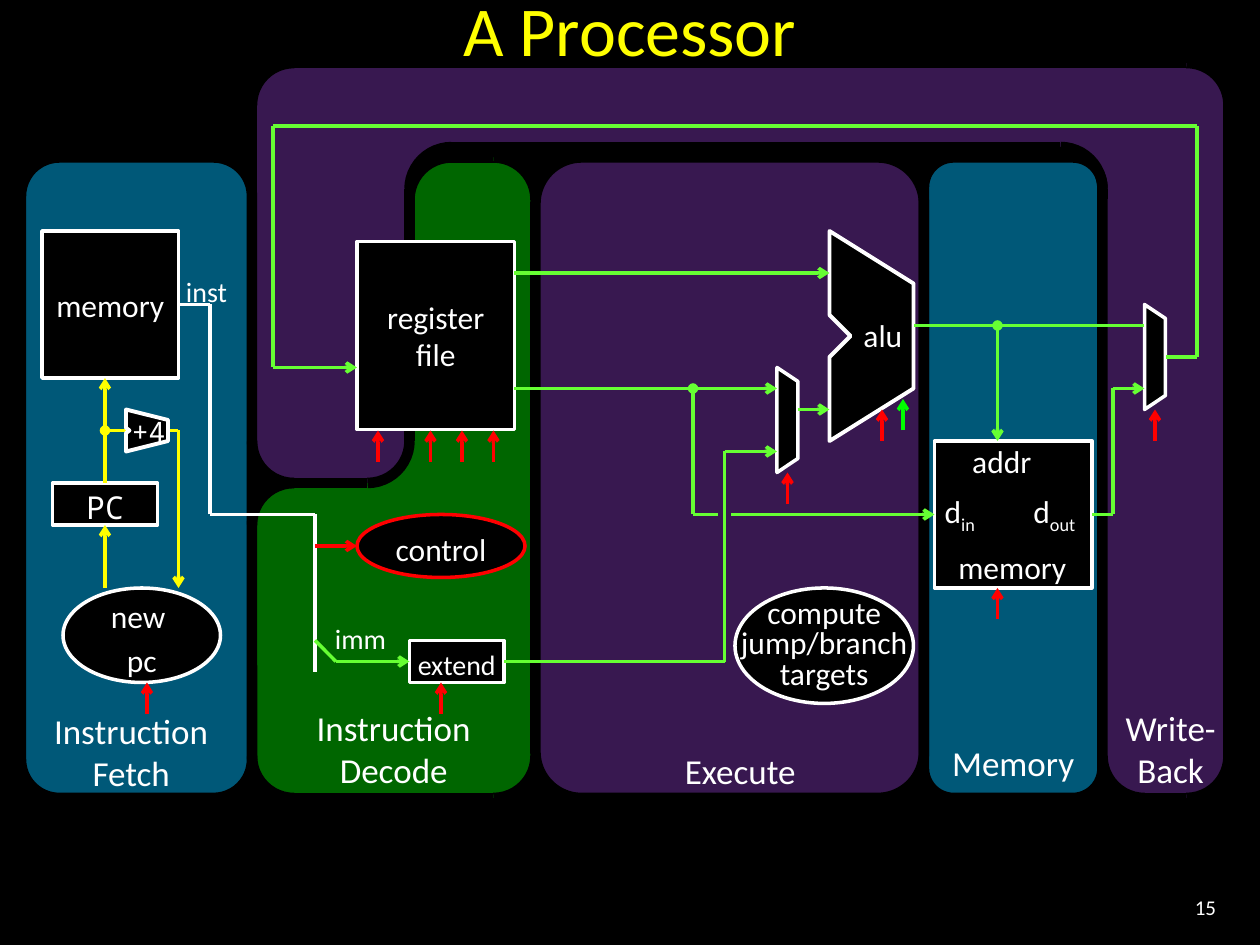
from lxml import etree
from pptx import Presentation
from pptx.dml.color import RGBColor
from pptx.enum.shapes import MSO_CONNECTOR, MSO_SHAPE
from pptx.enum.text import MSO_ANCHOR, PP_ALIGN
from pptx.oxml.ns import qn
from pptx.util import Pt

RECT, ROUND = MSO_SHAPE.RECTANGLE, MSO_SHAPE.ROUNDED_RECTANGLE
OVAL, ARC, TRIANGLE = MSO_SHAPE.OVAL, MSO_SHAPE.ARC, MSO_SHAPE.RIGHT_TRIANGLE
STRAIGHT = MSO_CONNECTOR.STRAIGHT
MIDDLE, TOP_ANCHOR = MSO_ANCHOR.MIDDLE, MSO_ANCHOR.TOP
CENTER, RIGHT_ALIGN = PP_ALIGN.CENTER, PP_ALIGN.RIGHT
TOP, LEFT, BOTTOM, RIGHT = range(4)  # connection sites of a rectangle
MONO = "Noto Sans Mono"
COLORS = {
    "black": "000000", "white": "FFFFFF", "yellow": "FFFF00", "red": "FF0000",
    "lime": "66FF33", "green": "00FF00", "forest": "006600",
    "purple": "381850", "teal": "005878",
}
CORNER = {"tr": 0, "br": 90, "bl": 180, "tl": 270}  # arc rotation


def rgb(name):
    return RGBColor.from_string(COLORS[name])


def put_text(sp, text, size=18, color="white", font="Calibri", align=CENTER,
             anchor=MIDDLE, wrap=True, spacing=None, inset=(7.2, 3.6), sub=None):
    tf = sp.text_frame
    tf.word_wrap, tf.vertical_anchor = wrap, anchor
    tf.margin_left = tf.margin_right = Pt(inset[0])
    tf.margin_top = tf.margin_bottom = Pt(inset[1])
    p = tf.paragraphs[0]
    p.alignment = align
    if spacing:
        p.line_spacing = spacing
    for i, line in enumerate(text.split("\n")):
        if i:
            p.add_line_break()
        p.add_run().text = line
    if sub:
        r = p.add_run()
        r.text = sub
        r.font._element.set("baseline", "-25000")
    for r in p.runs:
        r.font.size, r.font.name = Pt(size), font
        r.font.color.rgb = rgb(color)


class Diagram:
    def __init__(self, slide):
        self.shapes = slide.shapes

    def paint(self, sp, fill, line, width):
        sp.shadow.inherit = False
        if fill:
            sp.fill.solid()
            sp.fill.fore_color.rgb = rgb(fill)
        else:
            sp.fill.background()
        if line:
            sp.line.color.rgb = rgb(line)
            sp.line.width = Pt(width)
        else:
            sp.line.fill.background()
        return sp

    def shape(self, kind, box, fill=None, line=None, width=2, adj=None, rot=0):
        sp = self.shapes.add_shape(kind, *map(Pt, box))
        if adj:
            sp.adjustments[0] = adj
        sp.rotation = rot
        return self.paint(sp, fill, line, width)

    def block(self, kind, box, text=None, line="white", **fmt):
        sp = self.shape(kind, box, "black", line)
        if text:
            put_text(sp, text, **fmt)
        return sp

    def polygon(self, points, width=2):
        pts = [(Pt(x), Pt(y)) for x, y in points]
        fb = self.shapes.build_freeform(*pts[0], scale=1.0)
        fb.add_line_segments(pts[1:], close=True)
        return self.paint(fb.convert_to_shape(), "black", "white", width)

    def label(self, box, text, **fmt):
        put_text(self.shapes.add_textbox(*map(Pt, box)), text, **fmt)

    def wire(self, color, x1, y1, x2, y2, head=None, tail=None, width=2,
             begin=None, end=None):
        c = self.shapes.add_connector(STRAIGHT, Pt(x1), Pt(y1), Pt(x2), Pt(y2))
        c.line.color.rgb = rgb(color)
        c.line.width = Pt(width)
        ln = c.line._get_or_add_ln()
        for tag, kind in (("a:headEnd", head), ("a:tailEnd", tail)):
            if kind:
                etree.SubElement(ln, qn(tag)).set("type", kind)
        etree.SubElement(c._element.spPr, qn("a:effectLst"))
        if begin:
            c.begin_connect(*begin)
        if end:
            c.end_connect(*end)


prs = Presentation()
prs.slide_width, prs.slide_height = Pt(720), Pt(540)
s = prs.slides.add_slide(prs.slide_layouts[6])
s.background.fill.solid()
s.background.fill.fore_color.rgb = rgb("black")
d = Diagram(s)

# Stage regions
FETCH, EXECUTE, MEMORY = (12, 90, 132, 366), (306, 90, 222, 366), (528, 90, 102, 366)
d.shape(TRIANGLE, (606, 72, 48, 54), "purple", rot=180)
for box in ((630, 36, 72, 420), (144, 36, 90, 240), (162, 36, 504, 48)):
    d.shape(ROUND, box, "purple", adj=0.304)
d.shape(TRIANGLE, (213, 69, 48, 54), "purple", rot=90)
d.shape(ROUND, MEMORY, "teal", adj=0.14)
d.shape(ROUND, FETCH, "teal")
d.shape(ROUND, EXECUTE, "purple", adj=0.119)
d.shape(ROUND, (234, 90, 72, 366), "forest", adj=0.31)
d.shape(ROUND, (144, 276, 162, 180), "forest", adj=0.159)
d.shape(TRIANGLE, (203, 247, 43, 42), "forest", rot=270)

# Black gaps between the regions
for box, adj in ((MEMORY, None), (FETCH, None), (EXECUTE, 0.119)):
    d.shape(ROUND, box, line="black", width=6, adj=adj)
for x, y, corner in (
        (234, 90, "tl"), (654, 408, "br"), (630, 408, "bl"), (582, 84, "tr"),
        (258, 408, "br"), (144, 408, "bl"), (654, 36, "tr"), (186, 228, "br"),
        (144, 36, "tl"), (144, 228, "bl"), (144, 276, "tl"), (258, 90, "tr"),
        (234, 84, "tl")):
    d.shape(ARC, (x, y, 48, 48), line="black", width=6, rot=CORNER[corner])
for ends in (
        (654, 456, 678, 456), (234, 108, 234, 252), (168, 456, 282, 456),
        (210, 276, 168, 276), (702, 60, 702, 432), (144, 60, 144, 210),
        (678, 36, 168, 36), (282, 90, 258, 90), (606, 84, 258, 84),
        (630, 108, 630, 114)):
    d.wire("black", *ends, width=6)

# Stage names
for box, name in (
        ((636, 400, 66, 56), "Write-\nBack"), ((522, 420, 114, 32), "Memory"),
        ((18, 402, 114, 56), "Instruction\nFetch"), ((366, 425, 114, 32), "Execute"),
        ((168, 400, 114, 56), "Instruction\nDecode")):
    d.label(box, name, size=20, anchor=TOP_ANCHOR)

# Blocks
d.polygon([(474, 132), (522, 162), (522, 222), (474, 252), (474, 204),
           (486, 192), (474, 180)], 2.25)
for x, y in ((654, 174), (444, 210)):  # multiplexers
    d.polygon([(x, y), (x + 12, y + 8), (x + 12, y + 52), (x, y + 60)])
data_mem = d.block(RECT, (534, 252, 90, 84))
d.block(RECT, (204, 138, 90, 107.5), "register\nfile")
d.block(OVAL, (204, 294, 96, 36), "control", line="red", wrap=False, spacing=1.16)
inst_mem = d.block(RECT, (24, 132, 78, 84), "memory")
pc = d.block(RECT, (30, 276, 60, 24), "PC", font=MONO, spacing=1.16)
extend = d.block(RECT, (234, 366, 54, 24), "extend", size=16, spacing=1.16,
                 inset=(0, 3.6))
d.block(OVAL, (420, 336, 102, 66), "compute\njump/branch\ntargets",
        wrap=False, spacing=0.8)
d.block(OVAL, (36, 336, 90, 54), "new \npc", wrap=False, spacing=1.16)

# Instruction and program counter wires
d.wire("white", 120, 174, 102, 174, end=(inst_mem, RIGHT))
for ends in ((120, 294, 120, 174), (120, 294, 180, 294), (180, 294, 180, 384)):
    d.wire("white", *ends)
d.wire("yellow", 60, 216, 60, 276, head="arrow", end=(pc, TOP))
d.wire("yellow", 60, 300, 60, 336, head="arrow", begin=(pc, BOTTOM))
d.wire("yellow", 102, 246, 102, 336, tail="arrow")
d.wire("yellow", 60, 246, 102, 246, head="oval")

# Data wires
for ends in (
        (684, 204, 684, 72), (156, 72, 156, 210), (180, 366, 192, 378),
        (684, 204, 666, 204), (636, 222, 636, 294), (654, 186, 522, 186),
        (156, 72, 684, 72)):
    d.wire("lime", *ends)
for ends in (
        (156, 210, 204, 210), (456, 234, 474, 234), (414, 258, 444, 258),
        (636, 222, 654, 222), (294, 156, 474, 156), (294, 222, 444, 222)):
    d.wire("lime", *ends, tail="arrow")
d.wire("lime", 396, 294, 396, 222, tail="oval")
d.wire("lime", 570, 186, 570, 252, head="oval", tail="arrow")
d.wire("lime", 396, 294, 534, 294, tail="arrow", end=(data_mem, LEFT))
d.wire("lime", 624, 294, 636, 294, begin=(data_mem, RIGHT))
d.wire("lime", 192, 378, 234, 378, tail="arrow", end=(extend, LEFT))
d.wire("purple", 414, 288, 414, 300, width=7)  # break where wires cross
d.wire("lime", 414, 258, 414, 378)
d.wire("lime", 288, 378, 414, 378, begin=(extend, RIGHT))

# Control signals
d.wire("red", 180, 312, 204, 312, tail="arrow")
for x, y in ((216, 246), (246, 246), (264, 246), (282, 246), (570, 336),
             (660, 234), (504, 234), (450, 270), (252, 390), (84, 390)):
    d.wire("red", x, y + 18, x, y, tail="arrow")
d.wire("green", 516, 246, 516, 228, tail="arrow")

# Adder
d.polygon([(72, 234), (96, 240), (96, 252), (72, 258), (72, 247.5),
           (74, 246), (72, 244.5)], 2.25)
d.label((70, 236, 30, 18), "+4", size=16, font=MONO, wrap=False,
        spacing=1.16, inset=(0, 0))

# Labels
d.label((486, 174, 37, 31), "alu", wrap=False, spacing=1.16, inset=(0, 3.6))
for box, text in (((182, 354, 48, 18), "imm"), ((98, 156, 40, 18), "inst")):
    d.label(box, text, size=16, wrap=False, spacing=1.16, inset=(0, 3.6))
d.label((540, 306, 77, 32), "memory", spacing=1.16)
d.label((534, 246, 77, 31), "addr", spacing=1.16)
d.label((528, 276, 41, 31), "d", sub="in", spacing=1.16)
d.label((582, 276, 41, 31), "d", sub="out", spacing=1.16)

# Title and slide number
d.label((0, 0, 720, 32), "A Processor", size=40, color="yellow")
d.label((642, 504, 60, 29), "15", size=12, align=RIGHT_ALIGN)

prs.save("out.pptx")
